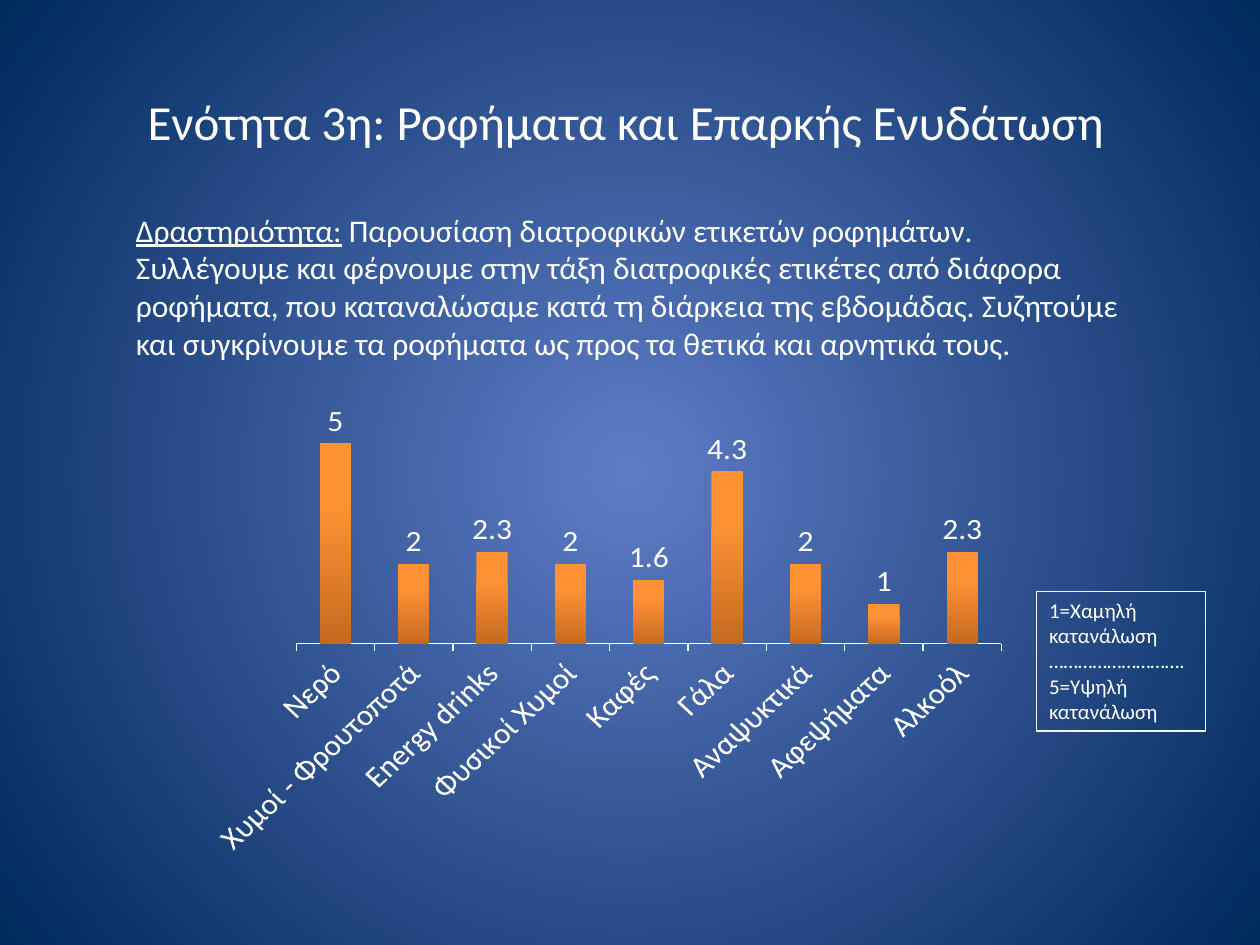
from dataclasses import dataclass

from pptx import Presentation
from pptx.chart.data import CategoryChartData
from pptx.dml.color import RGBColor
from pptx.enum.chart import XL_CHART_TYPE, XL_LABEL_POSITION, XL_TICK_MARK
from pptx.enum.text import PP_ALIGN
from pptx.oxml import parse_xml
from pptx.oxml.ns import nsdecls, qn
from pptx.util import Cm, Pt

LEFT, CENTER = PP_ALIGN.LEFT, PP_ALIGN.CENTER
COLUMN = XL_CHART_TYPE.COLUMN_CLUSTERED
OUTSIDE_END = XL_LABEL_POSITION.OUTSIDE_END
TICK_OUT, TICK_NONE = XL_TICK_MARK.OUTSIDE, XL_TICK_MARK.NONE
FONT, WHITE = "Calibri", "FFFFFF"


@dataclass
class TextBox:
    left: float
    top: float
    width: float
    height: float
    size: int
    paragraphs: list[str]
    align: PP_ALIGN = LEFT
    lead: str = ""  # underlined opening of the first paragraph
    border: str = ""


BOXES = [
    TextBox(2.11, 1.73, 21, 1.45, 28,
            ["Ενότητα 3η: Ροφήματα και Επαρκής Ενυδάτωση"], align=CENTER),
    TextBox(2.49, 4.12, 20.6, 3.33, 18,
            [" Παρουσίαση διατροφικών ετικετών ροφημάτων.",
             "Συλλέγουμε και φέρνουμε στην τάξη διατροφικές ετικέτες από διάφορα "
             "ροφήματα, που καταναλώσαμε κατά τη διάρκεια της εβδομάδας. Συζητούμε "
             "και συγκρίνουμε τα ροφήματα ως προς τα θετικά και αρνητικά τους."],
            lead="Δραστηριότητα:"),
    TextBox(20.9, 11.92, 3.4, 2.82, 12,
            ["1=Χαμηλή κατανάλωση", "……………………….", "5=Υψηλή κατανάλωση"],
            border="F5F4ED"),
]

CONSUMPTION = {
    "Νερό": 5, "Χυμοί - Φρουτοποτά": 2, "Energy drinks": 2.3,
    "Φυσικοί Χυμοί": 2, "Καφές": 1.6, "Γάλα": 4.3,
    "Αναψυκτικά": 2, "Αφεψήματα": 1, "Αλκοόλ": 2.3,
}


def rgb(code: str) -> RGBColor:
    return RGBColor.from_string(code)


def set_font(font, size: int) -> None:
    font.name, font.size = FONT, Pt(size)
    font.color.rgb = rgb(WHITE)


def set_gradient(fill, first: str, last: str, start: float = 0) -> None:
    fill.gradient()
    stops = fill.gradient_stops
    stops[0].color.rgb, stops[1].color.rgb = rgb(first), rgb(last)
    stops[0].position = start


def add_background(s) -> None:
    set_gradient(s.background.fill, "5E7CC5", "00295C")
    grad = s._element.find(".//" + qn("a:gradFill"))
    grad.replace(grad.find(qn("a:lin")), parse_xml(
        f'<a:path {nsdecls("a")} path="circle">'
        '<a:fillToRect l="50000" t="50000" r="50000" b="50000"/></a:path>'))


def add_text(s, box: TextBox) -> None:
    sp = s.shapes.add_textbox(Cm(box.left), Cm(box.top), Cm(box.width), Cm(box.height))
    if box.border:
        sp.line.color.rgb = rgb(box.border)
        sp.line.width = Pt(0.75)
    tf = sp.text_frame
    tf.word_wrap = True
    for i, text in enumerate(box.paragraphs):
        p = tf.add_paragraph() if i else tf.paragraphs[0]
        p.alignment = box.align
        set_font(p.font, box.size)
        if box.lead and i == 0:
            r = p.add_run()
            r.text, r.font.underline = box.lead, True
        p.add_run().text = text


def add_consumption_chart(s) -> None:
    data = CategoryChartData()
    data.categories = list(CONSUMPTION)
    data.add_series("Series 1", list(CONSUMPTION.values()))
    chart = s.shapes.add_chart(COLUMN, Cm(3.91), Cm(8.13), Cm(16.61), Cm(9.3), data).chart
    chart.has_title = chart.has_legend = False
    set_font(chart.font, 18)

    # Bars and their values
    plot = chart.plots[0]
    plot.gap_width, plot.vary_by_categories = 150, False
    fill = plot.series[0].format.fill
    set_gradient(fill, "FF9135", "C66A20", start=0.3)
    fill.gradient_angle = 270
    plot.has_data_labels = True
    labels = plot.data_labels
    labels.show_value, labels.position = True, OUTSIDE_END
    set_font(labels.font, 18)

    # Axes; the plot area is sized automatically so slanted labels fit in full
    val = chart.value_axis
    val.visible = val.has_major_gridlines = False
    val.minimum_scale, val.maximum_scale, val.major_unit = 0, 5, 1
    cat = chart.category_axis
    cat.major_tick_mark, cat.minor_tick_mark = TICK_OUT, TICK_NONE
    cat.format.line.color.rgb = rgb(WHITE)
    cat.format.line.width = Pt(0.75)
    set_font(cat.tick_labels.font, 18)
    cat._element.find(".//" + qn("a:bodyPr")).set("rot", str(-45 * 60000))


def main() -> None:
    prs = Presentation()
    prs.slide_width, prs.slide_height = Cm(25.4), Cm(19.05)
    s = prs.slides.add_slide(prs.slide_layouts[6])
    add_background(s)
    add_consumption_chart(s)
    for box in BOXES:
        add_text(s, box)
    prs.save("out.pptx")


if __name__ == "__main__":
    main()
